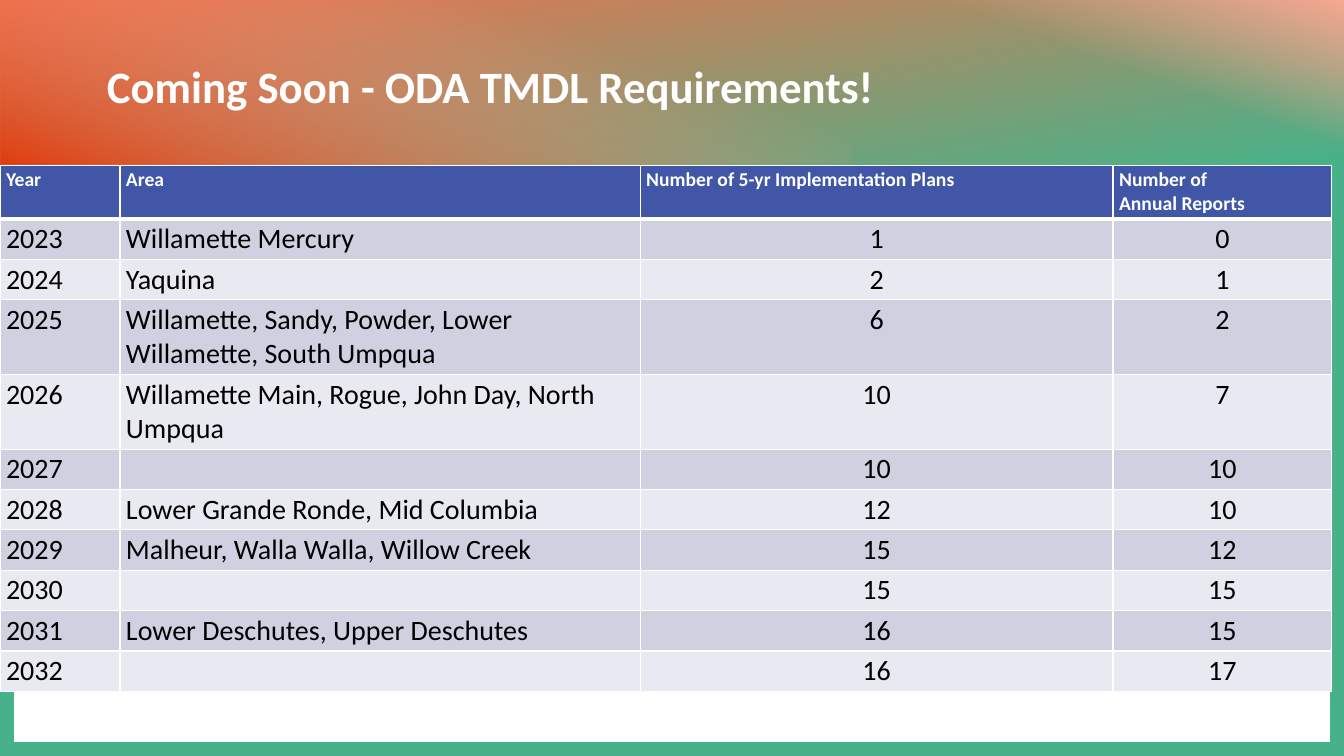
import pptx
import pptx.util
import pptx.dml.color
import pptx.enum.shapes
import pptx.enum.text
import pptx.oxml
import pptx.oxml.ns
from lxml import etree

Inches = pptx.util.Inches
ALIGN = pptx.enum.text.PP_ALIGN
ANCHOR = pptx.enum.text.MSO_ANCHOR

COLORS = {
    "white": "FFFFFF",
    "black": "000000",
    "green": "47B289",
    "coral": "F3704B",
    "pink": "F8A993",
    "red": "E03D0F",
    "header": "4156A6",
    "dark band": "CFD1E1",
    "light band": "E9E9F1",
}

TITLE_FORMAT = {"name": "Calibri", "size": pptx.util.Pt(32), "bold": True}
HEADER_FORMAT = {"name": "Calibri", "size": pptx.util.Pt(14), "bold": True}
BODY_FORMAT = {"name": "Calibri", "size": pptx.util.Pt(20), "bold": False}
CELL_FORMAT = {
    "margin_left": Inches(0.06),
    "margin_right": Inches(0.06),
    "margin_top": Inches(0.03),
    "margin_bottom": Inches(0.03),
    "vertical_anchor": ANCHOR.TOP,
}

COLUMN_WIDTHS = [1.19, 5.16, 4.69, 2.17]
HEADER_HEIGHT, LINE_HEIGHT, TWO_LINE_HEIGHT = 0.53, 0.4, 0.74
TWO_LINE_YEARS = ("2025", "2026")
REQUIREMENTS = [
    ("Year", "Area", "Number of 5-yr Implementation Plans", "Number of\nAnnual Reports"),
    ("2023", "Willamette Mercury", "1", "0"),
    ("2024", "Yaquina", "2", "1"),
    ("2025", "Willamette, Sandy, Powder, Lower Willamette, South Umpqua", "6", "2"),
    ("2026", "Willamette Main, Rogue, John Day, North Umpqua", "10", "7"),
    ("2027", "", "10", "10"),
    ("2028", "Lower Grande Ronde, Mid Columbia", "12", "10"),
    ("2029", "Malheur, Walla Walla, Willow Creek", "15", "12"),
    ("2030", "", "15", "15"),
    ("2031", "Lower Deschutes, Upper Deschutes", "16", "15"),
    ("2032", "", "16", "17"),
]


def rgb(name):
    return pptx.dml.color.RGBColor.from_string(COLORS[name])


def apply_format(target, values):
    for attribute, value in values.items():
        setattr(target, attribute, value)


def format_runs(paragraph, values, color):
    for run in paragraph.runs:
        apply_format(run.font, values)
        run.font.color.rgb = rgb(color)


def add_rectangle(slide, left, top, width, height):
    shape = slide.shapes.add_shape(
        pptx.enum.shapes.MSO_SHAPE.RECTANGLE,
        Inches(left), Inches(top), Inches(width), Inches(height))
    shape.shadow.inherit = False
    return shape


def add_frame(slide):
    frame = add_rectangle(slide, 0, 0, 13.33, 7.5)
    frame.fill.background()
    frame.line.color.rgb = rgb("green")
    frame.line.width = pptx.util.Pt(20)


def add_gradient(slide, box, rotation, angle, stops):
    """Stops are (position, color, opacity); the angle runs clockwise."""
    shape = add_rectangle(slide, *box)
    shape.rotation = rotation
    shape.line.fill.background()
    shape.fill.gradient()
    shape.fill.gradient_angle = 360 - angle
    gradient_stops = shape.fill.gradient_stops
    elements = shape._element.spPr.findall(".//" + pptx.oxml.ns.qn("a:gs"))
    for stop, element, (position, color, opacity) in zip(gradient_stops, elements, stops):
        stop.position = position
        stop.color.rgb = rgb(color)
        if opacity < 1:
            alpha = etree.SubElement(element[0], pptx.oxml.ns.qn("a:alpha"))
            alpha.set("val", str(int(opacity * 100000)))


def add_title(slide, text):
    title = slide.shapes.title
    slide.shapes._spTree.append(title._element)  # in front of the banner
    apply_format(title, {"left": Inches(0.96), "top": Inches(0.33),
                         "width": Inches(11.46), "height": Inches(1.1)})
    frame = title.text_frame
    frame.text = text
    apply_format(frame, {"word_wrap": True, "vertical_anchor": ANCHOR.MIDDLE,
                         "auto_size": pptx.enum.text.MSO_AUTO_SIZE.NONE})
    paragraph = frame.paragraphs[0]
    apply_format(paragraph, {"alignment": ALIGN.LEFT, "line_spacing": 0.9})
    format_runs(paragraph, TITLE_FORMAT, "white")


def set_borders(cell, widths):
    """Widths in points for the sides L, R, T and B, in that order."""
    properties = cell._tc.get_or_add_tcPr()
    for index, (side, width) in enumerate(widths.items()):
        properties.insert(index, pptx.oxml.parse_xml(
            f'<a:ln{side} {pptx.oxml.ns.nsdecls("a")} w="{pptx.util.Pt(width)}">'
            f'<a:solidFill><a:srgbClr val="{COLORS["white"]}"/></a:solidFill></a:ln{side}>'))


def row_height(row_index, year):
    if row_index == 0:
        return HEADER_HEIGHT
    return TWO_LINE_HEIGHT if year in TWO_LINE_YEARS else LINE_HEIGHT


def fill_cell(cell, text, row_index, column_index):
    is_header = row_index == 0
    band = "header" if is_header else "dark band" if row_index % 2 else "light band"
    cell.text = text
    apply_format(cell, CELL_FORMAT)
    cell.fill.solid()
    cell.fill.fore_color.rgb = rgb(band)
    set_borders(cell, {"L": 1, "R": 1, "T": 3 if row_index == 1 else 1,
                       "B": 3 if is_header else 1})
    for paragraph in cell.text_frame.paragraphs:
        centered = not is_header and column_index >= 2
        paragraph.alignment = ALIGN.CENTER if centered else ALIGN.LEFT
        format_runs(paragraph, HEADER_FORMAT if is_header else BODY_FORMAT,
                    "white" if is_header else "black")


def add_requirements_table(slide, left, top):
    heights = [row_height(index, row[0]) for index, row in enumerate(REQUIREMENTS)]
    table = slide.shapes.add_table(
        len(REQUIREMENTS), len(COLUMN_WIDTHS), Inches(left), Inches(top),
        Inches(sum(COLUMN_WIDTHS)), Inches(sum(heights))).table
    for column, width in zip(table.columns, COLUMN_WIDTHS):
        column.width = Inches(width)
    for row_index, values in enumerate(REQUIREMENTS):
        table.rows[row_index].height = Inches(heights[row_index])
        for column_index, text in enumerate(values):
            fill_cell(table.cell(row_index, column_index), text, row_index, column_index)


def main():
    presentation = pptx.Presentation()
    presentation.slide_width = Inches(13.33)
    presentation.slide_height = Inches(7.5)
    slide = presentation.slides.add_slide(presentation.slide_layouts[5])

    # Frame and banner
    add_frame(slide)
    add_gradient(slide, (5.84, -5.87, 1.66, 13.34), 270, 170,
                 [(0, "coral", 1), (1, "green", 1)])
    add_gradient(slide, (9.75, -1.97, 1.65, 5.54), 270, 20,
                 [(0.59, "pink", 0), (1, "pink", 1)])
    add_gradient(slide, (3.39, -3.42, 1.66, 8.44), 90, 20,
                 [(0.29, "pink", 0), (1, "red", 1)])

    # Content
    add_title(slide, "Coming Soon - ODA TMDL Requirements!")
    add_requirements_table(slide, 0, 1.64)

    presentation.save("out.pptx")


if __name__ == "__main__":
    main()
